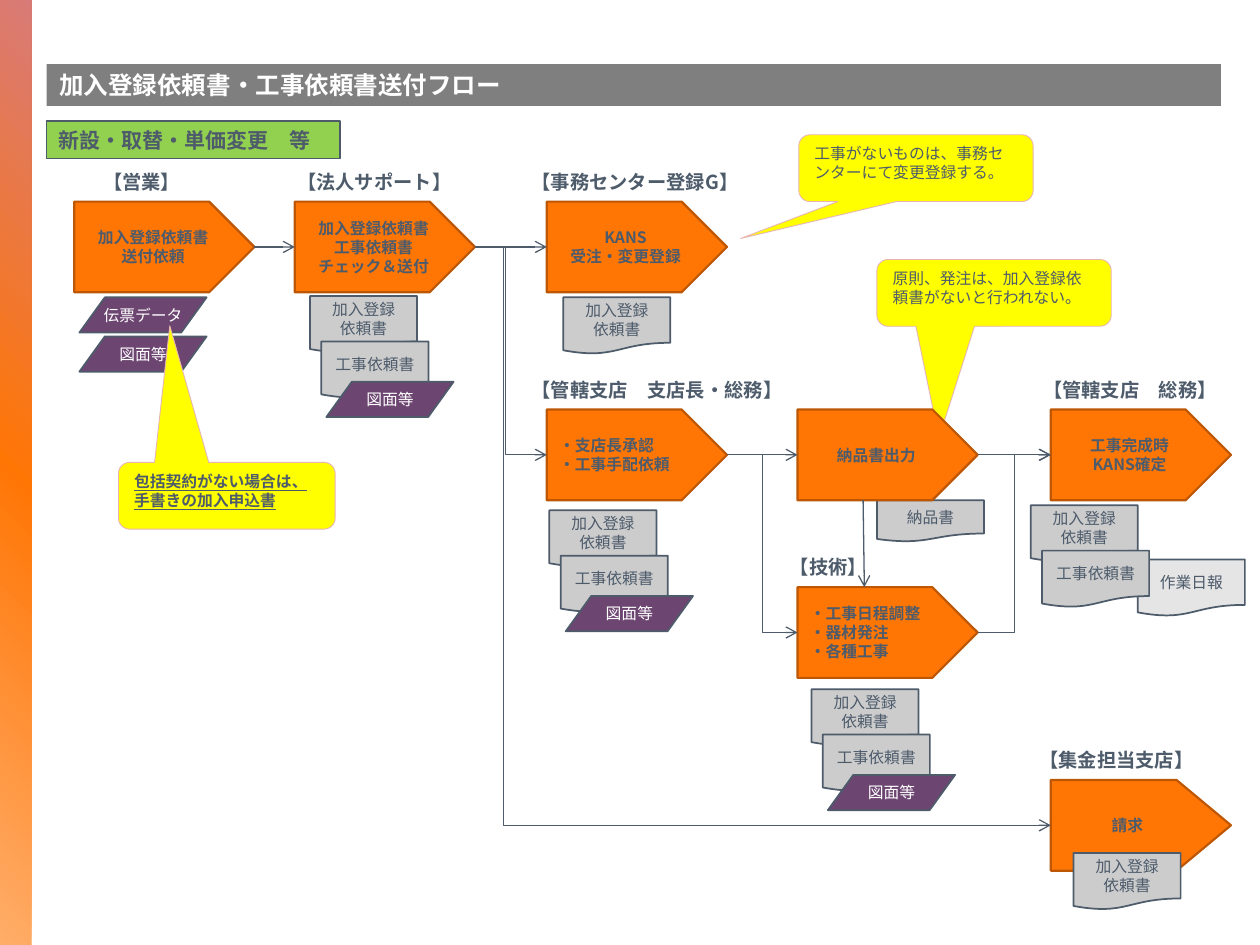
import copy

import lxml.etree
import pptx
import pptx.dml.color
import pptx.enum.shapes
import pptx.enum.text
import pptx.oxml.ns
import pptx.util

RGBColor = pptx.dml.color.RGBColor
SHAPE = pptx.enum.shapes.MSO_SHAPE
CONNECTOR = pptx.enum.shapes.MSO_CONNECTOR
ANCHOR = pptx.enum.text.MSO_ANCHOR
ALIGN = pptx.enum.text.PP_ALIGN
Inches, Pt, qn = pptx.util.Inches, pptx.util.Pt, pptx.oxml.ns.qn

FONT = "Noto Sans CJK JP"
SLATE = RGBColor(0x4D, 0x5B, 0x6B)
WHITE = RGBColor(0xFF, 0xFF, 0xFF)
GRAY = RGBColor(0x7F, 0x7F, 0x7F)
GREEN = RGBColor(0x92, 0xD0, 0x50)
ORANGE = RGBColor(0xFF, 0x76, 0x05)
RUST = RGBColor(0xBD, 0x57, 0x04)
PEACH = RGBColor(0xFF, 0xAD, 0x69)
ROSE = RGBColor(0xD8, 0x7A, 0x77)
PURPLE = RGBColor(0x6C, 0x45, 0x71)
PAPER = RGBColor(0xCC, 0xCC, 0xCC)
PALE_PAPER = RGBColor(0xE5, 0xE5, 0xE5)
YELLOW = RGBColor(0xFF, 0xFF, 0x00)
PINK = RGBColor(0xE9, 0xB4, 0xB3)

TITLE = "加入登録依頼書・工事依頼書送付フロー"
SCOPE = "新設・取替・単価変更　等"

COLUMNS = (0.59, 2.34, 4.34, 6.33, 8.34)
ROWS = (1.6, 3.25, 4.66, 6.19)
STEP_SIZE = (1.43, 0.72)
LABEL_RISE = 0.3

STEPS = {
    "sales": (0, 0, "加入登録依頼書\n送付依頼", ALIGN.CENTER, 0.5),
    "support": (1, 0, "加入登録依頼書\n工事依頼書\nチェック＆送付", ALIGN.CENTER, 0.5),
    "center": (2, 0, "KANS\n受注・変更登録", ALIGN.CENTER, 0.5),
    "branch": (2, 1, "・支店長承認\n・工事手配依頼", ALIGN.LEFT, 0.5),
    "delivery": (3, 1, "納品書出力", ALIGN.CENTER, 0.5),
    "completion": (4, 1, "工事完成時\nKANS確定", ALIGN.CENTER, 0.5),
    "engineering": (3, 2, "・工事日程調整\n・器材発注\n・各種工事", ALIGN.LEFT, 0.5),
    "billing": (4, 3, "請求", ALIGN.CENTER, 0.6),
}

LABELS = [
    (0, 0, 0.13, 0.96, "【営業】"),
    (1, 0, -0.08, 1.75, "【法人サポート】"),
    (2, 0, -0.22, 2.3, "【事務センター登録G】"),
    (2, 1, -0.22, 2.21, "【管轄支店　支店長・総務】"),
    (4, 1, -0.16, 1.68, "【管轄支店　総務】"),
    (3, 2, -0.16, 1.15, "【技術】"),
    (4, 3, -0.19, 1.5, "【集金担当支店】"),
]

FLOWS = [
    ("sales", "center", None),
    ("support", "center", None),
    ("support", "branch", 0.43),
    ("support", "billing", 0.05),
    ("branch", "delivery", None),
    ("branch", "engineering", 0.5),
    ("delivery", "completion", None),
    ("engineering", "completion", 0.5),
]
FLOWS[0] = ("sales", "support", None)

REQUEST, WORK, DRAWING = "加入登録\n依頼書", "工事依頼書", "図面等"
WORK_SHIFT, DRAWING_SHIFT = (0.09, 0.36), (0.13, 0.68)
STACKS = [
    (2.46, 2.35, (REQUEST, WORK, DRAWING)),
    (4.47, 2.36, (REQUEST,)),
    (4.36, 4.05, (REQUEST, WORK, DRAWING)),
    (6.44, 5.47, (REQUEST, WORK, DRAWING)),
    (8.18, 4.01, (REQUEST, WORK)),
    (8.52, 6.77, (REQUEST,)),
]
SHIFTS = {REQUEST: (0, 0), WORK: WORK_SHIFT, DRAWING: DRAWING_SHIFT}
PAPER_SIZE, SLIP_SIZE = (0.85, 0.45), (1.01, 0.28)

NOTES = [
    (6.96, 2.06, 1.86, (-0.235, 2.175), "原則、発注は、加入登録依頼書がないと行われない。"),
    (6.34, 1.07, 1.86, (-0.748, 1.053), "工事がないものは、事務センターにて変更登録する。"),
]
CONTRACT_NOTE = (0.94, 3.67, 1.72, (-0.263, -2.545), "包括契約がない場合は、手書きの加入申込書")


def write(shape, text, size=9, color=SLATE, bold=False, underline=False,
          align=ALIGN.LEFT, anchor=ANCHOR.MIDDLE, wrap=True):
    frame = shape.text_frame
    frame.word_wrap = wrap
    frame.vertical_anchor = anchor
    frame.text = text
    for paragraph in frame.paragraphs:
        paragraph.alignment = align
        for run in paragraph.runs:
            font = run.font
            font.size, font.bold, font.underline = Pt(size), bold, underline
            font.color.rgb = color
            font.name = FONT
            east_asian = lxml.etree.SubElement(font._element, qn("a:ea"))
            east_asian.set("typeface", FONT)


def draw(slide, kind, box, fill, line=None, width=1.0):
    shape = slide.shapes.add_shape(kind, *map(Inches, box))
    shape.shadow.inherit = False
    shape.fill.solid()
    shape.fill.fore_color.rgb = fill
    if line is None:
        shape.line.fill.background()
    else:
        shape.line.color.rgb = line
        shape.line.width = Pt(width)
    return shape


def add_side_band(slide):
    band = draw(slide, SHAPE.RECTANGLE, (0, 0, 0.25, 7.5), ORANGE)
    band.fill.gradient()
    band.fill.gradient_angle = 45
    stop_list = band._element.spPr.find(".//" + qn("a:gsLst"))
    stop_list.append(copy.deepcopy(stop_list[-1]))
    for stop, position, color in zip(band.fill.gradient_stops, (0, 0.5, 1), (PEACH, ORANGE, ROSE)):
        stop.position = position
        stop.color.rgb = color


def add_title(slide):
    title = slide.shapes.title
    title.left, title.top, title.width, title.height = map(Inches, (0.37, 0.51, 9.32, 0.33))
    geometry = lxml.etree.SubElement(title._element.spPr, qn("a:prstGeom"), prst="roundRect")
    lxml.etree.SubElement(geometry, qn("a:avLst"))
    title.fill.solid()
    title.fill.fore_color.rgb = GRAY
    write(title, TITLE, size=14, color=WHITE, bold=True, wrap=False)


def add_step(slide, column, row, text, align, point):
    step = draw(slide, SHAPE.PENTAGON, (COLUMNS[column], ROWS[row], *STEP_SIZE), ORANGE, RUST, 1.25)
    step.adjustments[0] = point
    write(step, text, bold=True, align=align)
    return step


def add_arrow(slide, kind, ends=(0, 0, 0, 0), bend=None):
    arrow = slide.shapes.add_connector(kind, *map(Inches, ends))
    arrow.line.color.rgb = SLATE
    arrow.line.width = Pt(0.75)
    properties = arrow._element.spPr
    lxml.etree.SubElement(properties.find(qn("a:ln")), qn("a:tailEnd"), type="arrow")
    lxml.etree.SubElement(properties, qn("a:effectLst"))
    if bend is not None:
        guides = properties.find(".//" + qn("a:avLst"))
        lxml.etree.SubElement(guides, qn("a:gd"), name="adj1", fmla=f"val {round(bend * 100000)}")
    return arrow


def add_paper(slide, left, top, text, size=PAPER_SIZE, fill=PAPER):
    paper = draw(slide, SHAPE.FLOWCHART_DOCUMENT, (left, top, *size), fill, SLATE)
    write(paper, text, align=ALIGN.CENTER, wrap=False)


def add_slip(slide, left, top, text):
    slip = draw(slide, SHAPE.FLOWCHART_DATA, (left, top, *SLIP_SIZE), PURPLE, SLATE)
    write(slip, text, color=WHITE, align=ALIGN.CENTER, wrap=False)


def add_note(slide, left, top, width, tip, text, strong=False):
    note = draw(slide, SHAPE.ROUNDED_RECTANGULAR_CALLOUT, (left, top, width, 0.53), YELLOW, PINK, 0.5)
    note.adjustments[0], note.adjustments[1] = tip
    write(note, text, bold=strong, underline=strong, anchor=ANCHOR.TOP)


def main():
    deck = pptx.Presentation()
    deck.slide_width, deck.slide_height = Inches(10), Inches(7.5)
    slide = deck.slides.add_slide(deck.slide_layouts[5])
    add_side_band(slide)
    add_title(slide)
    scope = draw(slide, SHAPE.RECTANGLE, (0.37, 0.96, 2.33, 0.3), GREEN, SLATE, 0.75)
    write(scope, SCOPE, size=12, bold=True)

    for column, row, shift, width, text in LABELS:
        box = (COLUMNS[column] + shift, ROWS[row] - LABEL_RISE, width, 0.29)
        label = slide.shapes.add_textbox(*map(Inches, box))
        write(label, text, size=11, bold=True, anchor=ANCHOR.TOP)

    for note in NOTES:
        add_note(slide, *note)
    add_paper(slide, 6.96, 3.97, "納品書", size=(0.85, 0.33))
    steps = {key: add_step(slide, *step) for key, step in STEPS.items()}
    for source, target, bend in FLOWS:
        arrow = add_arrow(slide, CONNECTOR.STRAIGHT if bend is None else CONNECTOR.ELBOW, bend=bend)
        arrow.begin_connect(steps[source], 3)
        arrow.end_connect(steps[target], 1)
    add_arrow(slide, CONNECTOR.STRAIGHT, (6.85, 3.97, 6.86, 4.66))

    add_slip(slide, 0.63, 2.36, "伝票データ")
    add_slip(slide, 0.63, 2.67, DRAWING)
    add_paper(slide, 9.03, 4.44, "作業日報", fill=PALE_PAPER)
    for left, top, papers in STACKS:
        for text in papers:
            across, down = SHIFTS[text]
            add_sheet = add_slip if text == DRAWING else add_paper
            add_sheet(slide, left + across, top + down, text)
    add_note(slide, *CONTRACT_NOTE, strong=True)
    deck.save("out.pptx")


if __name__ == "__main__":
    main()
